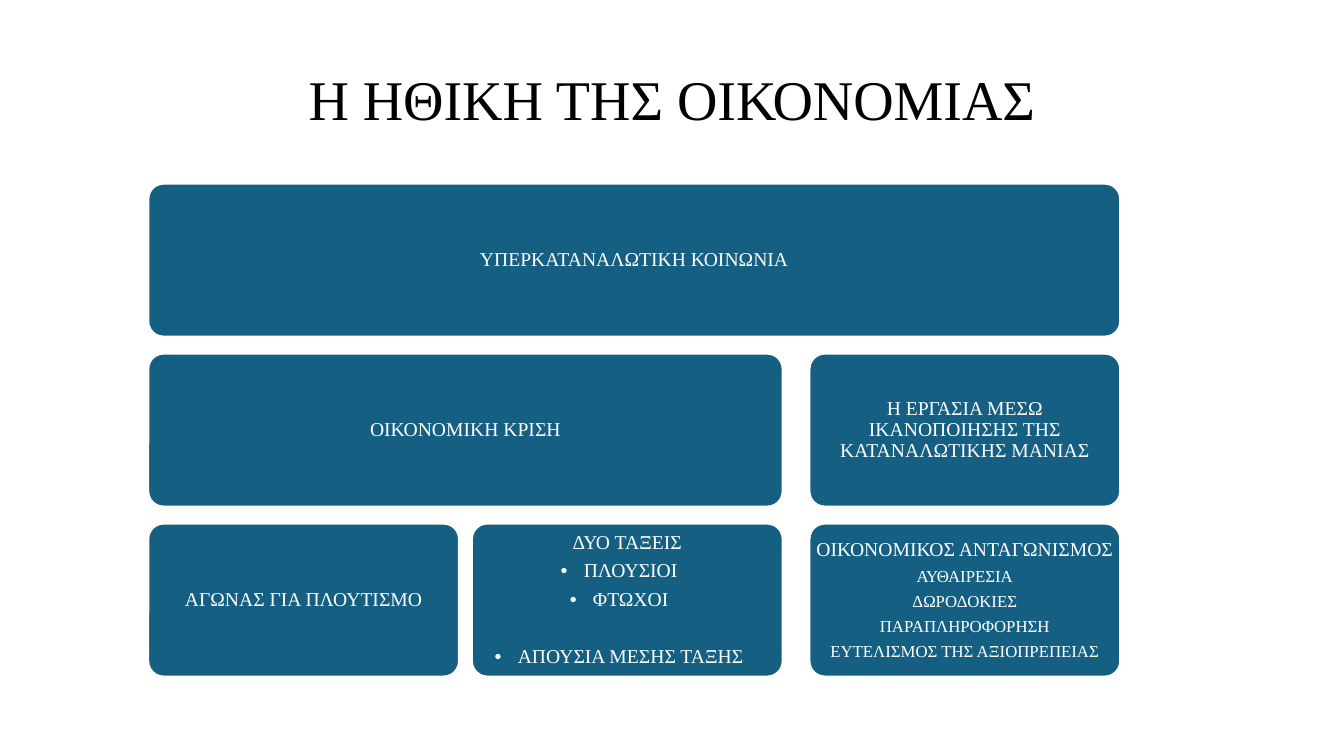
from pptx import Presentation
from pptx.dml.color import RGBColor
from pptx.enum import shapes, text
from pptx.oxml import ns
from pptx.util import Pt
from lxml import etree

TEAL = RGBColor(0x15, 0x60, 0x82)
WHITE = RGBColor(255, 255, 255)
BLACK = RGBColor(0, 0, 0)
FONT = "Times New Roman"

# Grid, in points
COLS = [105.9, 337.1, 578.2]
TOP, PITCH = 131.2, 121.4
WIDE, HIGH = 222, 109.3

# Row, first column, last column, lines as (text, size, bullet, space after)
BOXES = [
    (0, 0, 2, [("ΥΠΕΡΚΑΤΑΝΑΛΩΤΙΚΗ ΚΟΙΝΩΝΙΑ", 14, False, 0)]),
    (1, 0, 1, [("ΟΙΚΟΝΟΜΙΚΗ ΚΡΙΣΗ", 14, False, 0)]),
    (2, 0, 0, [("ΑΓΩΝΑΣ ΓΙΑ ΠΛΟΥΤΙΣΜΟ", 14, False, 0)]),
    (2, 1, 1, [("ΔΥΟ ΤΑΞΕΙΣ", 14, False, 5.5),
               ("ΠΛΟΥΣΙΟΙ", 14, True, 5.5),
               ("ΦΤΩΧΟΙ", 14, True, 25.5),
               ("ΑΠΟΥΣΙΑ ΜΕΣΗΣ ΤΑΞΗΣ", 14, True, 0)]),
    (1, 2, 2, [("Η ΕΡΓΑΣΙΑ ΜΕΣΩ ΙΚΑΝΟΠΟΙΗΣΗΣ ΤΗΣ ΚΑΤΑΝΑΛΩΤΙΚΗΣ ΜΑΝΙΑΣ",
                14, False, 0)]),
    (2, 2, 2, [("ΟΙΚΟΝΟΜΙΚΟΣ ΑΝΤΑΓΩΝΙΣΜΟΣ", 14, False, 5.5),
               ("ΑΥΘΑΙΡΕΣΙΑ", 12, False, 4.75),
               ("ΔΩΡΟΔΟΚΙΕΣ", 12, False, 4.75),
               ("ΠΑΡΑΠΛΗΡΟΦΟΡΗΣΗ", 12, False, 4.75),
               ("ΕΥΤΕΛΙΣΜΟΣ ΤΗΣ ΑΞΙΟΠΡΕΠΕΙΑΣ", 12, False, 0)]),
]


def style(para, size, color):
    para.alignment = text.PP_ALIGN.CENTER
    para.line_spacing = 0.9
    for run in para.runs:
        run.font.name = FONT
        run.font.size = Pt(size)
        run.font.color.rgb = color


def bullet(para):
    props = para._p.get_or_add_pPr()
    props.set("marL", str(Pt(4.7)))
    props.set("indent", str(-Pt(16.5)))
    etree.SubElement(props, ns.qn("a:buFont"), typeface="Arial")
    etree.SubElement(props, ns.qn("a:buChar"), char="•")


def title(slide, words):
    shape = slide.shapes.title
    shape.left, shape.top = Pt(120), Pt(27.4)
    shape.width, shape.height = Pt(720), Pt(70.6)
    frame = shape.text_frame
    frame.text = words
    frame.vertical_anchor = text.MSO_ANCHOR.BOTTOM
    style(frame.paragraphs[0], 40, BLACK)


def box(slide, row, first, last, lines):
    left = COLS[first]
    shape = slide.shapes.add_shape(
        shapes.MSO_SHAPE.ROUNDED_RECTANGLE, Pt(left), Pt(TOP + row * PITCH),
        Pt(COLS[last] + WIDE - left), Pt(HIGH))
    shape.adjustments[0] = 0.1
    shape.shadow.inherit = False
    shape.fill.solid()
    shape.fill.fore_color.rgb = TEAL
    shape.line.color.rgb = WHITE
    shape.line.width = Pt(1.5)

    # Text inside the box
    frame = shape.text_frame
    frame.word_wrap = True
    frame.vertical_anchor = text.MSO_ANCHOR.MIDDLE
    frame.margin_left = frame.margin_right = Pt(1)
    frame.margin_top = frame.margin_bottom = Pt(1)
    frame.text = "\n".join(line[0] for line in lines)
    for para, (_, size, dot, after) in zip(frame.paragraphs, lines):
        style(para, size, WHITE)
        para.space_after = Pt(after)
        if dot:
            bullet(para)


def main():
    deck = Presentation()
    deck.slide_width, deck.slide_height = Pt(960), Pt(540)
    slide = deck.slides.add_slide(deck.slide_layouts[0])

    # The slide has no subtitle
    sub = slide.placeholders[1].element
    sub.getparent().remove(sub)

    title(slide, "Η ΗΘΙΚΗ ΤΗΣ ΟΙΚΟΝΟΜΙΑΣ")
    for row, first, last, lines in BOXES:
        box(slide, row, first, last, lines)
    deck.save("out.pptx")


if __name__ == "__main__":
    main()
